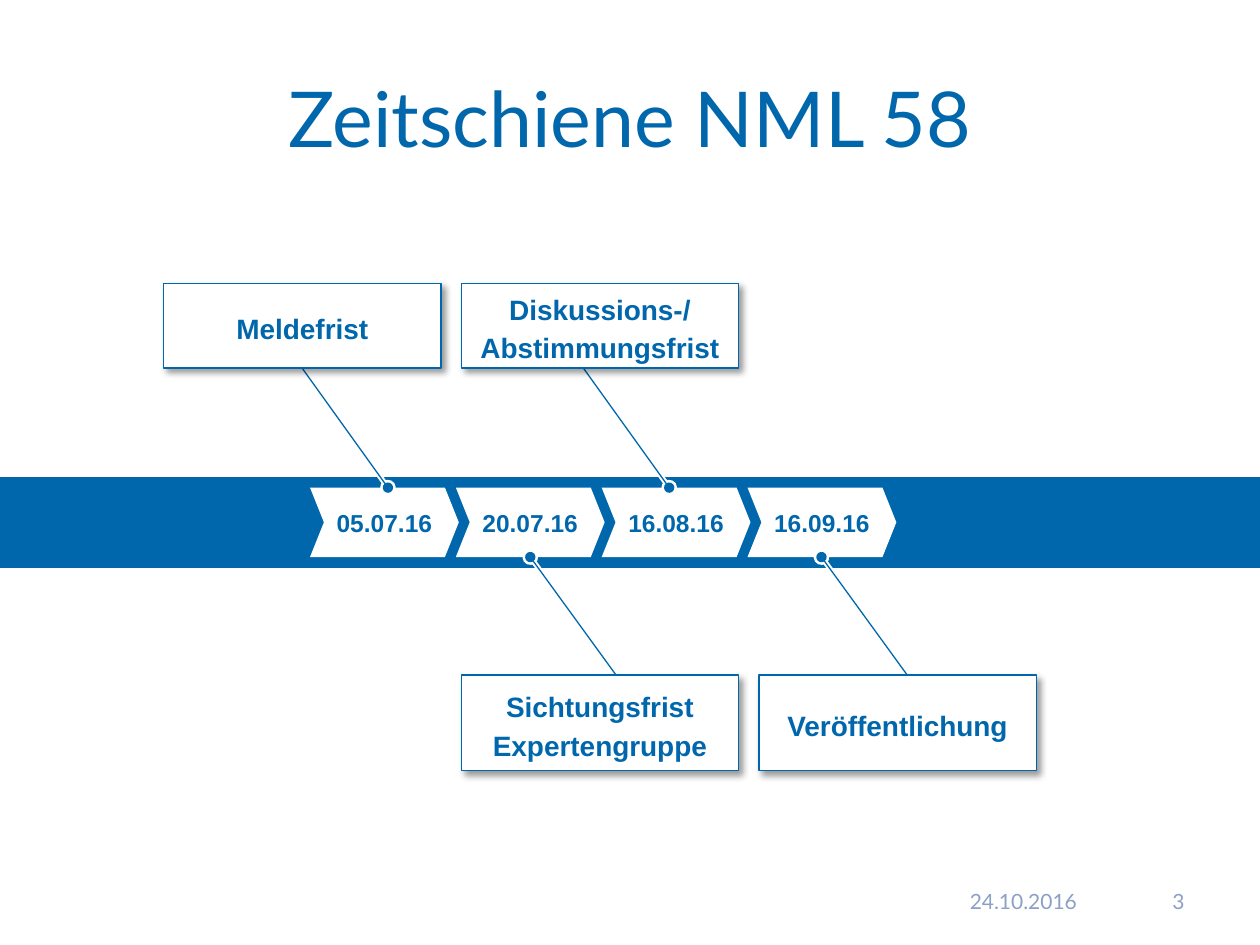
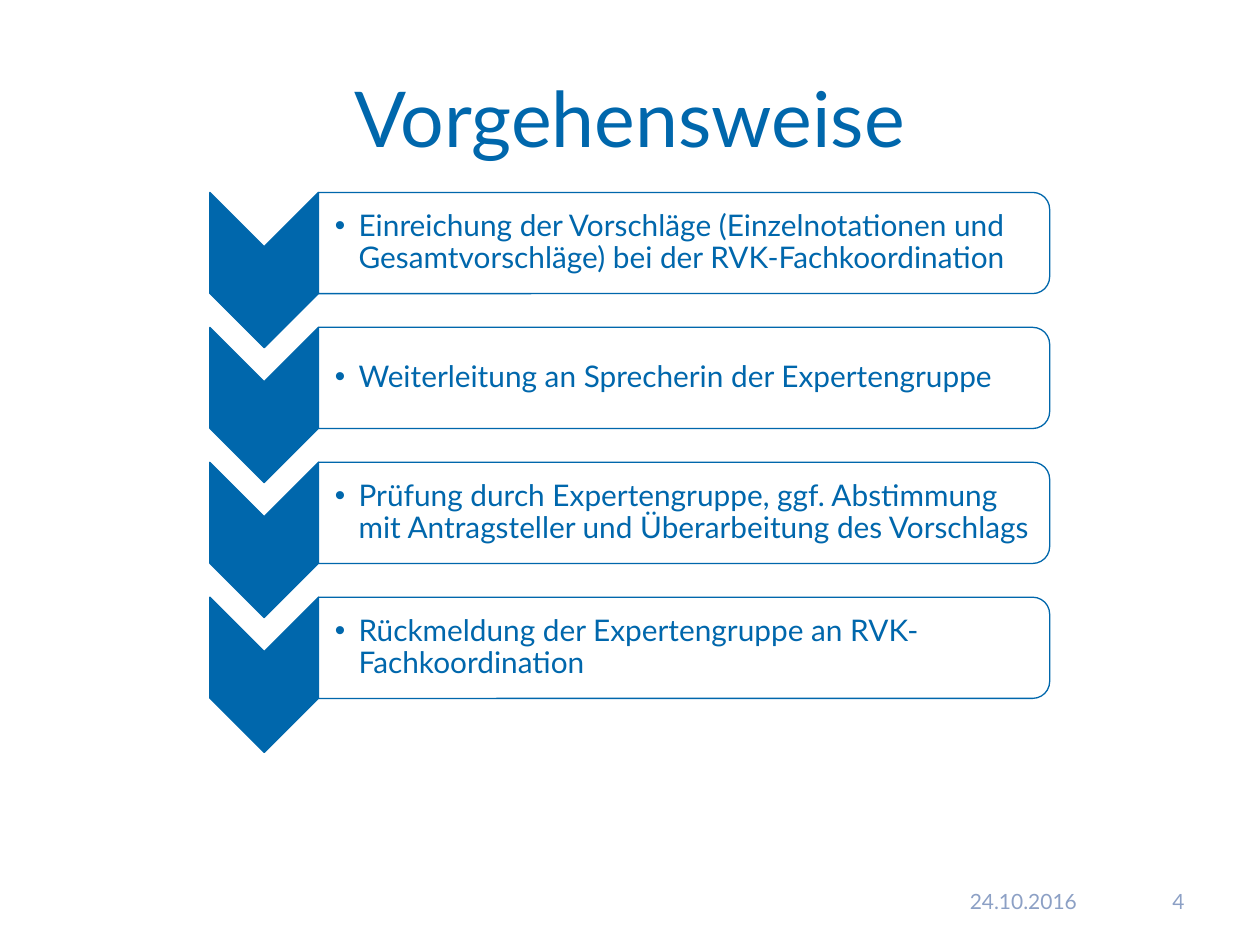
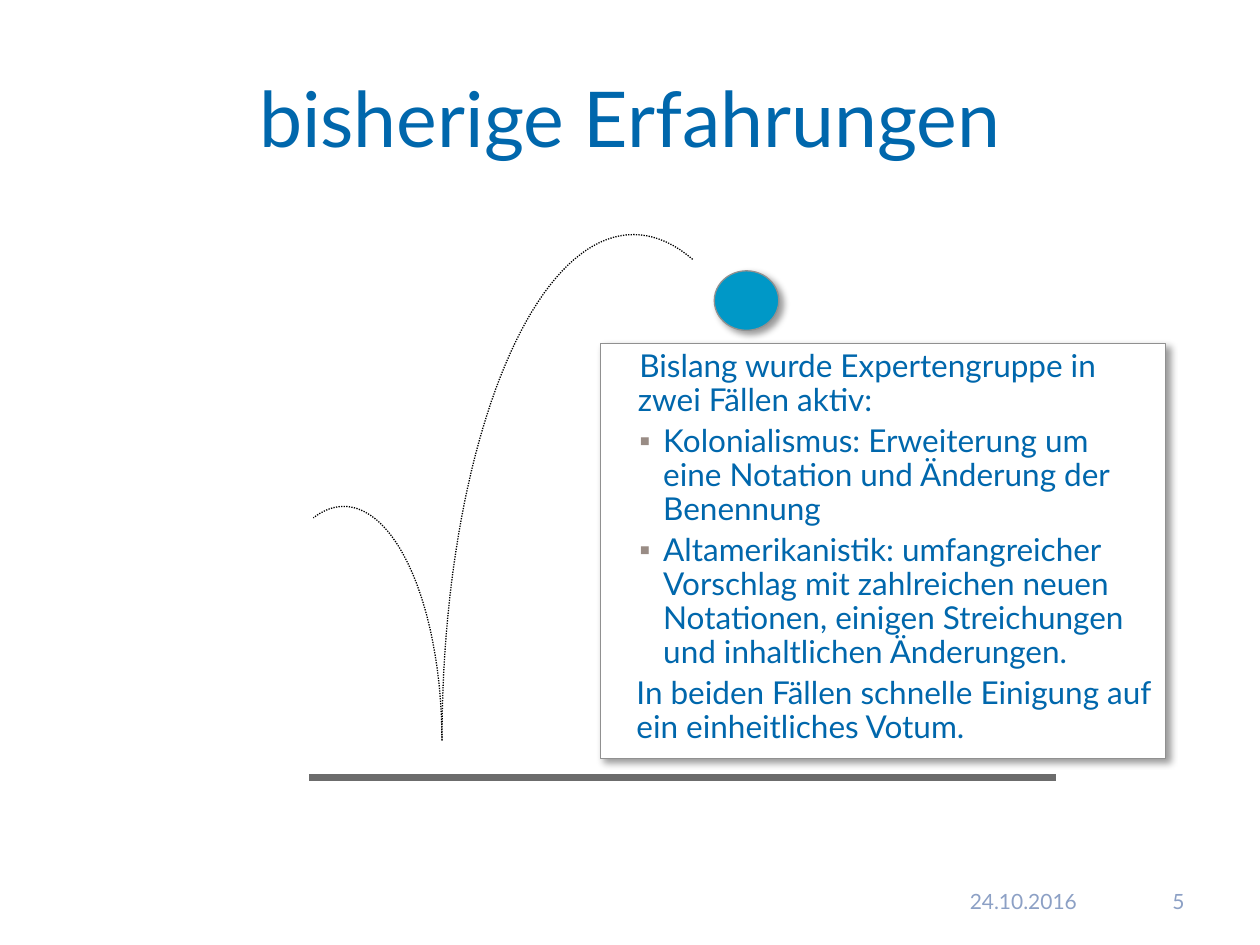
from math import cos, radians, sin

from lxml import etree
from pptx import Presentation
from pptx.dml.color import RGBColor
from pptx.enum.dml import MSO_LINE
from pptx.enum.shapes import MSO_CONNECTOR, MSO_SHAPE
from pptx.enum.text import MSO_ANCHOR, MSO_AUTO_SIZE, PP_ALIGN
from pptx.oxml.ns import qn
from pptx.util import Cm, Pt

LEFT, CENTER, RIGHT = PP_ALIGN.LEFT, PP_ALIGN.CENTER, PP_ALIGN.RIGHT
MIDDLE, TOP = MSO_ANCHOR.MIDDLE, MSO_ANCHOR.TOP
STRAIGHT = MSO_CONNECTOR.STRAIGHT
BLUE, WHITE, BLACK = "0067AC", "FFFFFF", "000000"
FOOTER, BALL, EDGE, GROUND, BULLET = "8CA0C5", "0098C7", "909090", "6C6C6C", "998C85"
HEADING_FONT, LABEL_FONT = "Lato", "Arial"
BODY_LAYOUT, TITLE_LAYOUT = 1, 5
DATE = "24.10.2016"
DEADLINES = [  # date, label lines, x of the marker
    ("05.07.16", ["Meldefrist"], 7.82),
    ("20.07.16", ["Sichtungsfrist", "Expertengruppe"], 10.69),
    ("16.08.16", ["Diskussions-/", "Abstimmungsfrist"], 13.49),
    ("16.09.16", ["Veröffentlichung"], 16.56),
]
STEPS = [
    "Einreichung der Vorschläge (Einzelnotationen und Gesamtvorschläge) bei der RVK-Fachkoordination",
    "Weiterleitung an Sprecherin der Expertengruppe",
    "Prüfung durch Expertengruppe, ggf. Abstimmung mit Antragsteller und Überarbeitung des Vorschlags",
    "Rückmeldung der Expertengruppe an RVK-Fachkoordination",
]
EXPERIENCES = [  # text, left margin, first-line indent, bullet
    ("Bislang wurde Expertengruppe in zwei Fällen aktiv:", 0.51, 0.03, None),
    ("Kolonialismus: Erweiterung um eine Notation und Änderung der Benennung", 1.02, -0.48, "▪"),
    ("Altamerikanistik: umfangreicher Vorschlag mit zahlreichen neuen Notationen, "
     "einigen Streichungen und inhaltlichen Änderungen.", 1.02, -0.48, "▪"),
    ("In beiden Fällen schnelle Einigung auf ein einheitliches Votum.", 0.48, 0, None),
]


def rgb(value):
    return RGBColor.from_string(value)


def add_child(parent, tag, **attributes):
    child = etree.SubElement(parent, qn(tag))
    for key, value in attributes.items():
        child.set(key, str(value))
    return child


def cm_box(*lengths):
    return [Cm(length) for length in lengths]


def paint(shape, fill=None, line=None, shadow=False):
    """Set fill, outline and an optional soft shadow to the lower right."""
    if fill:
        shape.fill.solid()
        shape.fill.fore_color.rgb = rgb(fill)
    else:
        shape.fill.background()
    if line:
        shape.line.color.rgb = rgb(line)
        shape.line.width = Pt(0.75)
    else:
        shape.line.fill.background()
    shape.shadow.inherit = False
    if shadow:
        effects = shape._element.spPr.find(qn("a:effectLst"))
        outer = add_child(effects, "a:outerShdw", blurRad=Pt(4), dist=Pt(3),
                          dir=45 * 60000, algn="tl", rotWithShape=0)
        color = add_child(outer, "a:srgbClr", val=BLACK)
        add_child(color, "a:alpha", val=40000)


def add_painted(slide, kind, box, **look):
    shape = slide.shapes.add_shape(kind, *cm_box(*box))
    paint(shape, **look)
    return shape


def set_frame(frame, anchor=MIDDLE, insets=(0.25, 0.13, 0.25, 0.13), wrap=True):
    frame.word_wrap = wrap
    frame.auto_size = MSO_AUTO_SIZE.NONE
    frame.vertical_anchor = anchor
    (frame.margin_left, frame.margin_top,
     frame.margin_right, frame.margin_bottom) = cm_box(*insets)


def write(frame, lines, size, color=BLUE, font=HEADING_FONT, bold=False, align=LEFT, after=0):
    for i, line in enumerate(lines):
        paragraph = frame.add_paragraph() if i else frame.paragraphs[0]
        paragraph.text = line
        paragraph.alignment = align
        paragraph.space_after = Pt(after)
        style(paragraph, size, color, font, bold)


def style(paragraph, size, color, font=HEADING_FONT, bold=False):
    paragraph.font.size = Pt(size)
    paragraph.font.name = font
    paragraph.font.bold = bold
    paragraph.font.color.rgb = rgb(color)


def set_bullet(paragraph, margin, indent, char=None, color=BLUE):
    properties = paragraph._p.get_or_add_pPr()
    properties.set("marL", str(Cm(margin)))
    properties.set("indent", str(Cm(indent)))
    if char:
        add_child(add_child(properties, "a:buClr"), "a:srgbClr", val=color)
        add_child(properties, "a:buFont", typeface=LABEL_FONT)
        add_child(properties, "a:buChar", char=char)
    else:
        add_child(properties, "a:buNone")


def add_line(slide, start, end, color, width, oval_start=False):
    line = slide.shapes.add_connector(STRAIGHT, *cm_box(*start, *end))
    line.line.color.rgb = rgb(color)
    line.line.width = Pt(width)
    properties = line._element.spPr
    if oval_start:
        add_child(properties.find(qn("a:ln")), "a:headEnd", type="oval")
    add_child(properties, "a:effectLst")


def new_slide(prs, layout, title, number):
    slide = prs.slides.add_slide(prs.slide_layouts[layout])
    heading = slide.shapes.title
    heading.left, heading.top, heading.width, heading.height = cm_box(1.27, 0.76, 22.86, 3.18)
    set_frame(heading.text_frame)
    write(heading.text_frame, [title], 44, align=CENTER)
    for text, left, width, align in ((DATE, 19.3, 2.72, LEFT), (str(number), 22.5, 1.63, RIGHT)):
        footer = slide.shapes.add_textbox(*cm_box(left, 17.65, width, 1.02)).text_frame
        set_frame(footer)
        write(footer, [text], 12, FOOTER, align=align)
    return slide


def add_timeline(slide, top, left):
    """Band with dated chevrons; labels alternate above and below it."""
    chevron_top, chevron_height = top + 0.2, 1.4
    add_painted(slide, MSO_SHAPE.RECTANGLE, (0, top, 25.4, 1.8), fill=BLUE, line=BLUE)
    leaders, labels = [], []
    for i, (date, lines, marker) in enumerate(DEADLINES):
        chevron = add_painted(slide, MSO_SHAPE.CHEVRON,
                              (left + i * 2.94, chevron_top, 3, chevron_height), fill=WHITE)
        chevron.adjustments[0] = 0.2
        set_frame(chevron.text_frame, wrap=False)
        write(chevron.text_frame, [date], 14, font=LABEL_FONT, bold=True, align=CENTER, after=3)
        label_left = left - 2.95 + (i + 1) // 2 * 6
        if i % 2 == 0:
            label_top, label_height = top - 3.91, 1.7
            leaders.append(((marker, chevron_top), (marker - 1.73, label_top + label_height)))
        else:
            label_top, label_height = top + 3.98, 1.93
            leaders.append(((marker, chevron_top + chevron_height), (marker + 1.73, label_top)))
        labels.append((lines, (label_left, label_top, 5.59, label_height)))
    for color, width in ((WHITE, 3), (BLUE, 0.75)):
        for start, end in leaders:
            add_line(slide, start, end, color, width, oval_start=True)
    for lines, box in labels:
        label = add_painted(slide, MSO_SHAPE.RECTANGLE, box, fill=WHITE, line=BLUE, shadow=True)
        set_frame(label.text_frame, insets=(0.25, 0.23, 0.25, 0.13))
        write(label.text_frame, lines, 16, font=LABEL_FONT, bold=True, align=CENTER, after=3)


def add_upright(slide, kind, box, **look):
    """Add a preset turned by 90 degrees that fills the given visible box."""
    left, top, width, height = box
    shift = (width - height) / 2
    shape = add_painted(slide, kind, (left + shift, top - shift, height, width), **look)
    shape.rotation = 90


def add_step(slide, left, top, text):
    arrow_width, card_width, card_height = 2.19, 14.74, 2.04
    card_left = left + arrow_width
    add_upright(slide, MSO_SHAPE.CHEVRON, (left, top, arrow_width, 3.13), fill=BLUE, line=BLUE)
    add_upright(slide, MSO_SHAPE.ROUND_2_SAME_RECTANGLE,
                (card_left, top, card_width, card_height), fill=WHITE, line=BLUE)
    frame = slide.shapes.add_textbox(
        *cm_box(card_left, top + 0.1, card_width - 0.1, card_height - 0.2)).text_frame
    set_frame(frame, insets=(0.33, 0.02, 0.02, 0.02))
    set_bullet(frame.paragraphs[0], 0.48, -0.48, "•")
    write(frame, [text], 17)
    frame.paragraphs[0].line_spacing = 0.9


def fill_experiences(panel, box):
    panel.left, panel.top, panel.width, panel.height = cm_box(*box)
    paint(panel, fill=WHITE, line=EDGE, shadow=True)
    frame = panel.text_frame
    set_frame(frame, anchor=TOP)
    for i, (text, margin, indent, bullet) in enumerate(EXPERIENCES):
        paragraph = frame.add_paragraph() if i else frame.paragraphs[0]
        paragraph.text = text
        set_bullet(paragraph, margin, indent, bullet, BULLET)
        paragraph.line_spacing = 0.9
        paragraph.space_before = Pt(4 if i else 0)
        style(paragraph, 18, BLUE)


def add_bounce(slide, center, radii, first, last):
    """Dotted elliptical path between two angles in degrees."""
    points = [(Cm(center[0] + radii[0] * cos(radians(angle))),
               Cm(center[1] - radii[1] * sin(radians(angle))))
              for angle in range(first, last + 1, 2)]
    builder = slide.shapes.build_freeform(*points[0])
    builder.add_line_segments(points[1:], close=False)
    curve = builder.convert_to_shape()
    paint(curve, line=BLACK)
    curve.line.dash_style = MSO_LINE.ROUND_DOT


def add_ball_scene(slide, impact_x, impact_y):
    add_painted(slide, MSO_SHAPE.OVAL, (impact_x + 5.49, impact_y - 9.47, 1.3, 1.2),
                fill=BALL, line=EDGE, shadow=True)
    for offset, radii, first, last in ((-1.98, (1.98, 4.72), 0, 108),
                                       (3.86, (3.86, 10.2), 72, 180)):
        add_bounce(slide, (impact_x + offset, impact_y), radii, first, last)
    ground_y = impact_y + 0.74
    add_line(slide, (impact_x + 12.37, ground_y), (impact_x - 2.69, ground_y), GROUND, 4)


def main():
    prs = Presentation()
    prs.slide_width, prs.slide_height = Cm(25.4), Cm(19.05)

    add_timeline(new_slide(prs, TITLE_LAYOUT, "Zeitschiene NML 58", 3), top=9.63, left=6.25)

    procedure = new_slide(prs, TITLE_LAYOUT, "Vorgehensweise", 4)
    for i, text in enumerate(STEPS):
        add_step(procedure, 4.23, 3.88 + i * 2.72, text)

    experience = new_slide(prs, BODY_LAYOUT, "bisherige Erfahrungen", 5)
    fill_experiences(experience.placeholders[1], (12.1, 6.93, 11.4, 8.36))
    add_ball_scene(experience, 8.91, 14.93)

    prs.save("out.pptx")


if __name__ == "__main__":
    main()
